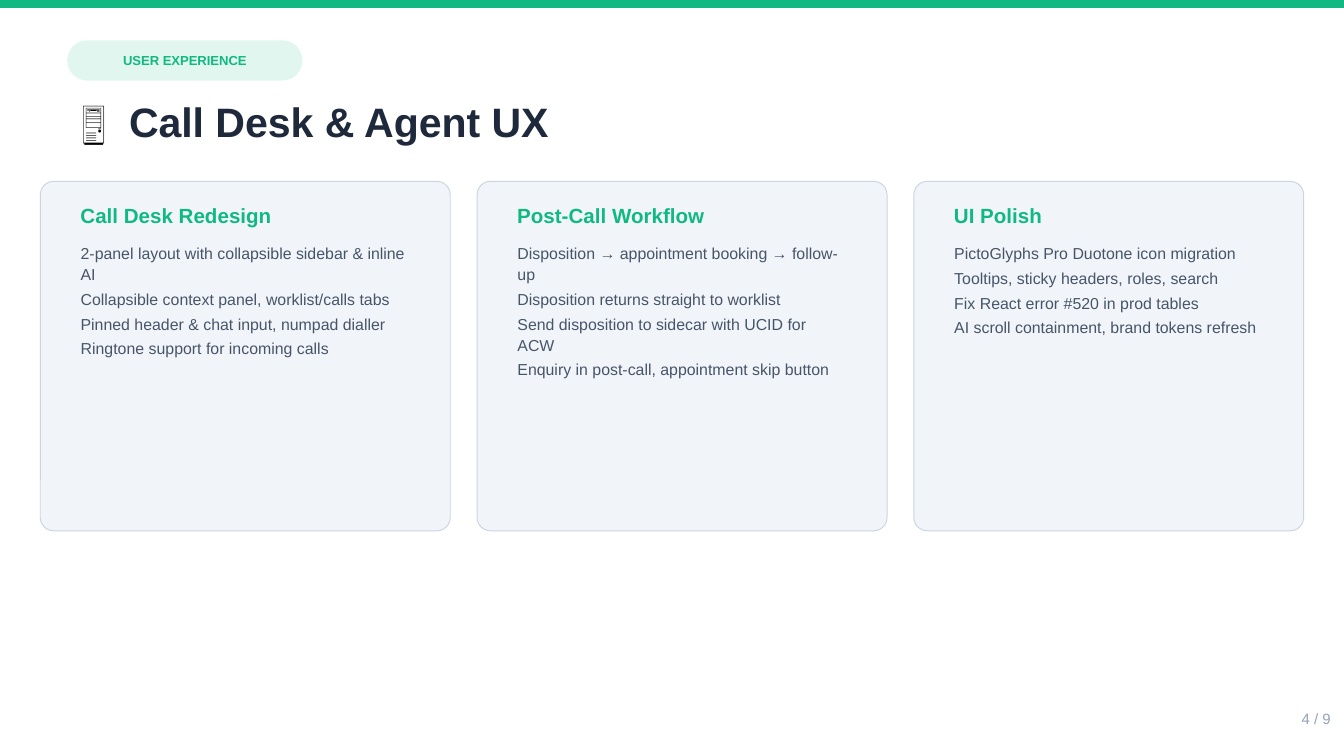
import pptx
import pptx.util
import pptx.dml.color
import pptx.enum.shapes
import pptx.enum.text
import pptx.oxml
import pptx.oxml.ns

Pt = pptx.util.Pt
SHAPE = pptx.enum.shapes.MSO_SHAPE
ALIGN = pptx.enum.text.PP_ALIGN
ANCHOR = pptx.enum.text.MSO_ANCHOR
NAMESPACE = pptx.oxml.ns.nsdecls("a")

COLORS = {
    "accent": "10B981",
    "title": "1E293B",
    "icon": "000000",
    "card": "F1F5F9",
    "border": "CBD5E1",
    "body": "475569",
    "muted": "94A3B8",
    "background": "FFFFFF",
}

CARDS = [
    ("Call Desk Redesign", 219.6, [
        "2-panel layout with collapsible sidebar & inline AI",
        "Collapsible context panel, worklist/calls tabs",
        "Pinned header & chat input, numpad dialler",
        "Ringtone support for incoming calls",
    ]),
    ("Post-Call Workflow", 219.6, [
        "Disposition → appointment booking → follow-up",
        "Disposition returns straight to worklist",
        "Send disposition to sidecar with UCID for ACW",
        "Enquiry in post-call, appointment skip button",
    ]),
    ("UI Polish", 208.8, [
        "PictoGlyphs Pro Duotone icon migration",
        "Tooltips, sticky headers, roles, search",
        "Fix React error #520 in prod tables",
        "AI scroll containment, brand tokens refresh",
    ]),
]
CARD_LEFT, CARD_TOP, CARD_HEIGHT, CARD_GAP = 21.6, 97.2, 187.2, 14.4


def rgb(name):
    return pptx.dml.color.RGBColor.from_string(COLORS[name])


def style_font(font, size, color, bold=False):
    font.name = "Arial"
    font.size = Pt(size)
    font.bold = bold
    font.color.rgb = rgb(color)


def add_panel(slide, kind, box, fill, line=None):
    shape = slide.shapes.add_shape(kind, *map(Pt, box))
    shape.shadow.inherit = False
    shape.fill.solid()
    shape.fill.fore_color.rgb = rgb(fill)
    if line:
        shape.line.color.rgb = rgb(line)
        shape.line.width = Pt(0.5)
    else:
        shape.line.fill.background()
    return shape


def write_line(shape, text, size, color, bold=False, align=ALIGN.LEFT):
    """Put one vertically centred line of text into a shape."""
    frame = shape.text_frame
    frame.text = text
    frame.word_wrap = True
    frame.vertical_anchor = ANCHOR.MIDDLE
    frame.paragraphs[0].alignment = align
    style_font(frame.paragraphs[0].runs[0].font, size, color, bold)


def place(shape, box):
    """Move a placeholder to a box, in front of everything drawn so far."""
    shape.left, shape.top, shape.width, shape.height = map(Pt, box)
    shape.text_frame.auto_size = pptx.enum.text.MSO_AUTO_SIZE.NONE
    shape.text_frame.word_wrap = True
    shape._element.getparent().append(shape._element)


def add_badge(slide, box, text):
    badge = add_panel(slide, SHAPE.ROUNDED_RECTANGLE, box, "accent")
    badge.adjustments[0] = 0.5
    color = badge.fill._xPr.find(".//" + pptx.oxml.ns.qn("a:srgbClr"))
    color.append(pptx.oxml.parse_xml(f'<a:alpha {NAMESPACE} val="12000"/>'))
    write_line(badge, text, 7, "accent", True, ALIGN.CENTER)


def fill_title(title, box, icon, text):
    place(title, box)
    title.text_frame.vertical_anchor = ANCHOR.MIDDLE
    paragraph = title.text_frame.paragraphs[0]
    paragraph.alignment = ALIGN.LEFT
    paragraph._p.get_or_add_pPr().append(pptx.oxml.parse_xml(
        f'<a:tabLst {NAMESPACE}><a:tab pos="{Pt(25.9)}" algn="l"/></a:tabLst>'))
    paragraph.text = icon + "\t"
    style_font(paragraph.runs[0].font, 22, "icon")
    run = paragraph.add_run()
    run.text = text
    style_font(run.font, 22, "title", True)


def fill_list(body, box, items):
    place(body, box)
    frame = body.text_frame
    frame.vertical_anchor = ANCHOR.TOP
    for index, item in enumerate(items):
        paragraph = frame.add_paragraph() if index else frame.paragraphs[0]
        paragraph.text = item
        properties = paragraph._p.get_or_add_pPr()
        properties.set("marL", "0")
        properties.set("indent", "0")
        properties.append(pptx.oxml.parse_xml(f"<a:buNone {NAMESPACE}/>"))
        paragraph.line_spacing = 1.1
        paragraph.space_before = Pt(0)
        paragraph.space_after = Pt(2)
        style_font(paragraph.runs[0].font, 8.5, "body")


def add_card(slide, body, box, heading, items):
    left, top, width, height = box
    panel = add_panel(slide, SHAPE.ROUNDED_RECTANGLE, box, "card", "border")
    panel.adjustments[0] = 0.038
    inner_left, inner_width = left + 14.4, width - 28.8
    heading_box = (inner_left, top + 5.76, inner_width, 25.2)
    write_line(slide.shapes.add_textbox(*map(Pt, heading_box)),
               heading, 11, "accent", True)
    fill_list(body, (inner_left, top + 28.8, inner_width, height - 36), items)


def main():
    presentation = pptx.Presentation()
    presentation.slide_width, presentation.slide_height = Pt(720), Pt(405)
    comparison_layout = presentation.slide_layouts[4]
    slide = presentation.slides.add_slide(comparison_layout)
    slide.background.fill.solid()
    slide.background.fill.fore_color.rgb = rgb("background")
    title, *bodies = list(slide.placeholders)

    add_panel(slide, SHAPE.RECTANGLE, (0, 0, 720, 4.32), "accent")
    add_badge(slide, (36, 21.6, 126, 21.6), "USER EXPERIENCE")
    fill_title(title, (36, 46.8, 648, 36), "🖥", "Call Desk & Agent UX")

    left = CARD_LEFT
    for body, (heading, width, items) in zip(bodies, CARDS):
        add_card(slide, body, (left, CARD_TOP, width, CARD_HEIGHT), heading, items)
        left += width + CARD_GAP
    for unused in bodies[len(CARDS):]:
        unused._element.getparent().remove(unused._element)

    page_number = slide.shapes.add_textbox(*map(Pt, (633.6, 374.4, 86.4, 21.6)))
    write_line(page_number, "4 / 9", 8, "muted", align=ALIGN.RIGHT)
    presentation.save("out.pptx")


if __name__ == "__main__":
    main()
